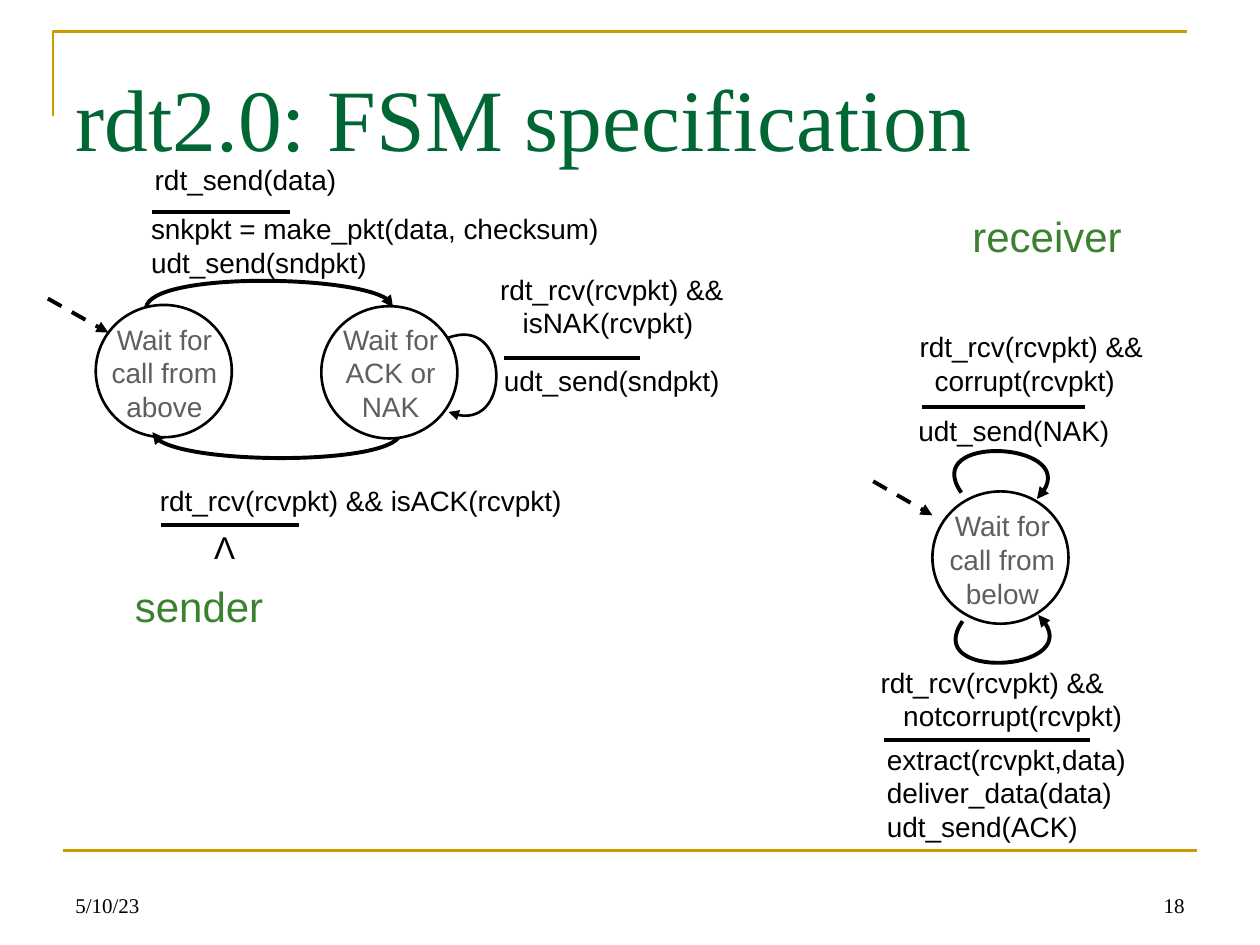
import pptx
import pptx.dml.color
import pptx.enum.dml
import pptx.enum.shapes
import pptx.enum.text
import pptx.oxml
import pptx.oxml.ns
import pptx.util
from pptx.util import Inches

BLACK = pptx.dml.color.RGBColor(0x00, 0x00, 0x00)
WHITE = pptx.dml.color.RGBColor(0xFF, 0xFF, 0xFF)
GRAY = pptx.dml.color.RGBColor(0x5F, 0x5F, 0x5F)
GOLD = pptx.dml.color.RGBColor(0xCC, 0x99, 0x00)
TITLE_GREEN = pptx.dml.color.RGBColor(0x00, 0x66, 0x33)
ROLE_GREEN = pptx.dml.color.RGBColor(0x3B, 0x81, 0x2F)
SERIF = "Times New Roman"
ALIGN = pptx.enum.text.PP_ALIGN
ANCHOR = pptx.enum.text.MSO_ANCHOR


def add_text(slide, place, lines, size=16, color=BLACK, font="Arial",
             align=ALIGN.LEFT, anchor=ANCHOR.TOP, wrap=True, last_indent=0):
    """Add a text box with one paragraph per line, the last one indented on request."""
    box = slide.shapes.add_textbox(*map(Inches, place))
    frame = box.text_frame
    frame.word_wrap = wrap
    frame.vertical_anchor = anchor
    frame.text = "\n".join(lines)
    for para in frame.paragraphs:
        para.alignment = align
        para.font.size = pptx.util.Pt(size)
        para.font.name = font
        para.font.color.rgb = color
    if last_indent:
        properties = frame.paragraphs[-1]._p.get_or_add_pPr()
        properties.set("marL", str(Inches(last_indent)))


def make_element(tag, attributes=""):
    """Return an empty drawing element."""
    return pptx.oxml.parse_xml(
        f'<a:{tag} {pptx.oxml.ns.nsdecls("a")} {attributes}/>')


def style_line(line, color, width):
    """Set the colour and the width in points of a line."""
    line.color.rgb = color
    line.width = pptx.util.Pt(width)


def add_arrowhead(line):
    """Put a triangle at the end of a line."""
    line._get_or_add_ln().append(make_element("tailEnd", 'type="triangle"'))


def add_line(slide, start, end, color=BLACK, width=2.25):
    """Add a straight line without a shadow."""
    connector = slide.shapes.add_connector(
        pptx.enum.shapes.MSO_CONNECTOR.STRAIGHT, *map(Inches, start + end))
    style_line(connector.line, color, width)
    connector._element.spPr.append(make_element("effectLst"))
    return connector


def add_initial_arrow(slide, start, end):
    """Add the dashed arrow that points at an initial state."""
    connector = add_line(slide, start, end)
    connector.line.dash_style = pptx.enum.dml.MSO_LINE.DASH
    add_arrowhead(connector.line)


def add_outline(slide, points, color=BLACK, width=2.25):
    """Add an open, unfilled outline through points given in inches."""
    start, *others = [(Inches(x), Inches(y)) for x, y in points]
    builder = slide.shapes.build_freeform(*start)
    builder.add_line_segments(others, close=False)
    outline = builder.convert_to_shape()
    outline.shadow.inherit = False
    outline.fill.background()
    style_line(outline.line, color, width)
    return outline


def add_transition(slide, controls, width=2.25):
    """Add a curved arrow along a cubic curve with four control points."""
    arrow = add_outline(slide, controls, width=width)
    curve = make_element("cubicBezTo")
    segments = arrow._element.xpath(".//a:lnTo")
    segments[0].addprevious(curve)
    for segment in segments:
        curve.append(segment[0])
        segment.getparent().remove(segment)
    add_arrowhead(arrow.line)


def add_state(slide, left, top, label, label_place):
    """Add a state circle and its label."""
    circle = slide.shapes.add_shape(
        pptx.enum.shapes.MSO_SHAPE.OVAL,
        *map(Inches, (left, top, 1.08, 1.05)))
    circle.shadow.inherit = False
    circle.fill.solid()
    circle.fill.fore_color.rgb = WHITE
    style_line(circle.line, BLACK, 1.5)
    add_text(slide, label_place, [label], color=GRAY, align=ALIGN.CENTER)


def add_frame(slide):
    """Add the gold rules, the title, the date and the slide number."""
    add_outline(slide, [(0.42, 0.92), (0.42, 0.25), (9.42, 0.25)], GOLD, 1.5)
    add_line(slide, (0.5, 6.75), (9.5, 6.75), GOLD, 1.5)
    add_text(slide, (0.5, 0.3, 9, 1.25), ["rdt2.0: FSM specification"],
             50, TITLE_GREEN, SERIF, anchor=ANCHOR.MIDDLE)
    add_text(slide, (0.5, 6.83, 2.33, 0.5), ["5/10/23"], 12, font=SERIF,
             anchor=ANCHOR.BOTTOM)
    add_text(slide, (7.17, 6.83, 2.33, 0.5), ["18"], 12, font=SERIF,
             align=ALIGN.RIGHT, anchor=ANCHOR.BOTTOM)


def add_sender(slide):
    """Add the sender's state machine."""
    add_state(slide, 0.76, 2.42, "Wait for call from above", (0.65, 2.51, 1.31, 0.67))
    add_transition(slide, [(1.16, 2.44), (1.2, 2.16), (3.12, 2.18), (3.12, 2.44)])
    add_transition(slide, [(3.18, 3.43), (3.18, 3.69), (1.25, 3.7), (1.21, 3.43)])
    add_transition(slide, [(3.56, 2.68), (4.04, 2.5), (4.07, 3.48), (3.56, 3.27)], 1.5)
    add_state(slide, 2.55, 2.43, "Wait for ACK or NAK", (2.51, 2.51, 1.18, 0.67))
    add_initial_arrow(slide, (0.38, 2.37), (0.86, 2.64))

    add_text(slide, (1.13, 1.24, 2.47, 0.43), ["rdt_send(data)"])
    add_line(slide, (1.21, 1.68), (2.3, 1.68))
    add_text(slide, (1.1, 1.63, 3.98, 0.44),
             ["snkpkt = make_pkt(data, checksum)", "udt_send(sndpkt)"])

    add_text(slide, (3.87, 2.11, 2.28, 0.69),
             ["rdt_rcv(rcvpkt) &&", "isNAK(rcvpkt)"], last_indent=0.18)
    add_line(slide, (4, 2.84), (5.08, 2.84))
    add_text(slide, (3.9, 2.84, 1.93, 0.44), ["udt_send(sndpkt)"])

    add_text(slide, (1.17, 3.79, 3.88, 0.31), ["rdt_rcv(rcvpkt) && isACK(rcvpkt)"])
    add_line(slide, (1.28, 4.17), (2.37, 4.17))
    add_text(slide, (1.6, 4.14, 0.35, 0.37), ["Λ"], 18,
             align=ALIGN.CENTER, wrap=False)
    add_text(slide, (0.95, 4.56, 1.26, 0.5), ["sender"], 24, ROLE_GREEN,
             align=ALIGN.CENTER, wrap=False)


def add_receiver(slide):
    """Add the receiver's state machine."""
    add_transition(slide, [(7.63, 3.91), (7.3, 3.44), (8.67, 3.51), (8.23, 3.96)])
    add_state(slide, 7.4, 3.9, "Wait for call from below", (7.3, 3.99, 1.31, 0.67))
    add_transition(slide, [(7.64, 4.93), (7.31, 5.4), (8.69, 5.33), (8.24, 4.88)])
    add_initial_arrow(slide, (6.93, 3.82), (7.4, 4.09))

    add_text(slide, (7.2, 2.57, 2.5, 0.34),
             ["rdt_rcv(rcvpkt) &&", "corrupt(rcvpkt)"], last_indent=0.12)
    add_line(slide, (7.32, 3.23), (8.61, 3.23))
    add_text(slide, (7.19, 3.23, 2.38, 0.28), ["udt_send(NAK)"])

    add_text(slide, (6.89, 5.23, 2.92, 0.77),
             ["rdt_rcv(rcvpkt) &&", "notcorrupt(rcvpkt)"], last_indent=0.18)
    add_line(slide, (7.02, 5.87), (8.65, 5.87))
    add_text(slide, (6.94, 5.84, 2.76, 0.68),
             ["extract(rcvpkt,data)", "deliver_data(data)", "udt_send(ACK)"])
    add_text(slide, (7.61, 1.62, 1.4, 0.51), ["receiver"], 24, ROLE_GREEN,
             align=ALIGN.CENTER, wrap=False)


def main():
    """Build the slide and save the deck."""
    deck = pptx.Presentation()
    deck.slide_width = Inches(10)
    deck.slide_height = Inches(7.5)
    page = deck.slides.add_slide(deck.slide_layouts[6])
    add_frame(page)
    add_sender(page)
    add_receiver(page)
    deck.save("out.pptx")


if __name__ == "__main__":
    main()
